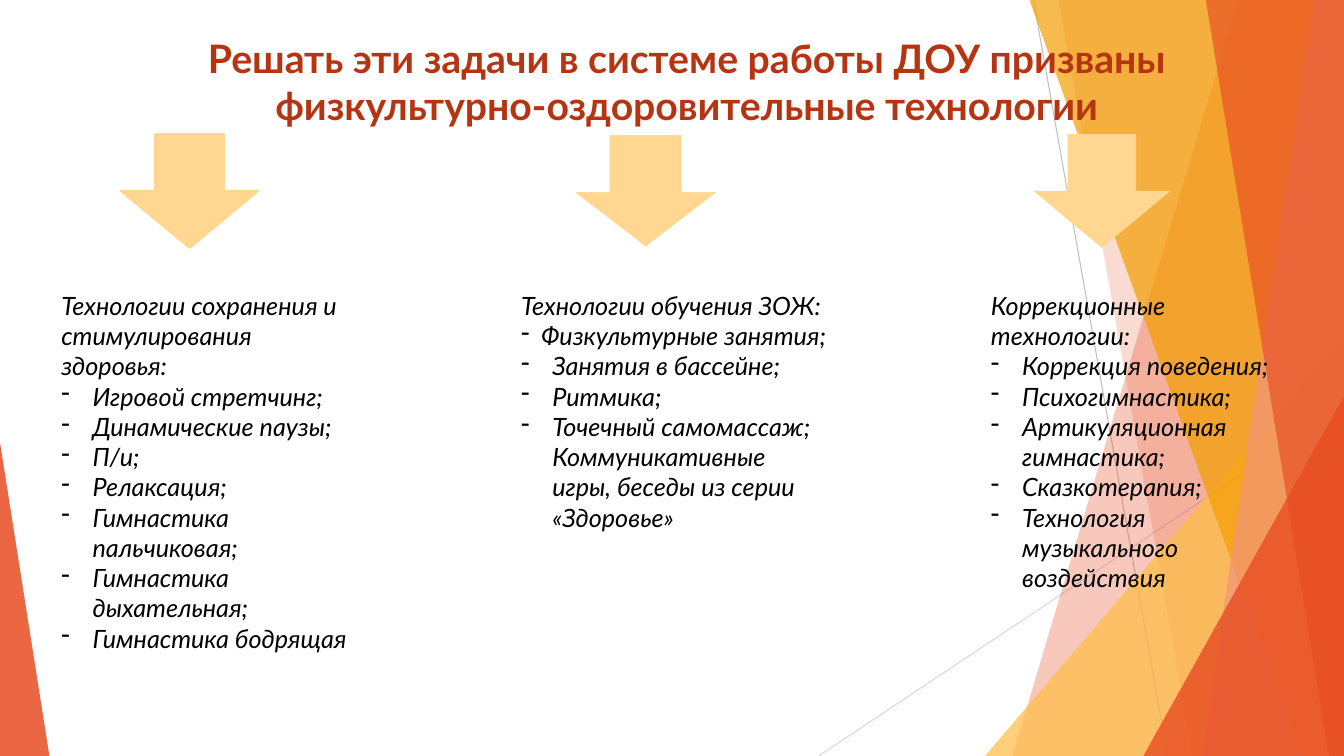
from lxml import etree
from pptx import Presentation
from pptx.dml.color import RGBColor
from pptx.enum.shapes import MSO_CONNECTOR as CONN, MSO_SHAPE as SHAPE
from pptx.enum.text import MSO_AUTO_SIZE as FIT, PP_ALIGN as ALIGN
from pptx.oxml.ns import qn
from pptx.util import Inches, Pt

WIDTH, HEIGHT = 13.33, 7.5
ORANGE_RED, AMBER, SALMON, YELLOW = "E84C22", "F49D00", "F1947A", "FFBD47"
SAND = "FFD791"
BULLET_INDENT = 0.31

COLUMNS = [
    ((0.51, 2.83, 3.14, 4.04), "Технологии сохранения и стимулирования здоровья:", [
        "Игровой стретчинг;", "Динамические паузы;", "П/и;", "Релаксация;",
        "Гимнастика пальчиковая;", "Гимнастика дыхательная;", "Гимнастика бодрящая"]),
    ((5.07, 2.83, 3.24, 3.74), "Технологии обучения ЗОЖ:", [
        ("Физкультурные занятия;", 0.2), "Занятия в бассейне;", "Ритмика;",
        "Точечный самомассаж;\nКоммуникативные игры, беседы из серии «Здоровье»"]),
    ((9.73, 2.83, 3.25, 3.43), "Коррекционные технологии:", [
        "Коррекция поведения;", "Психогимнастика;", "Артикуляционная гимнастика;",
        "Сказкотерапия;", "Технология музыкального воздействия"]),
]
ARROWS = [(1.2, 1.36, SAND), (5.67, 1.47, "FFFFFF"), (10.25, 1.36, None)]


def rgb(value):
    return RGBColor.from_string(value)


def paint(sp, fill, opacity=100, line=None):
    sp.shadow.inherit = False
    sp.fill.solid()
    sp.fill.fore_color.rgb = rgb(fill)
    if opacity < 100:
        color = sp.fill._xPr.find(qn("a:solidFill"))[0]
        etree.SubElement(color, qn("a:alpha")).set("val", str(opacity * 1000))
    if line:
        sp.line.color.rgb = rgb(line)
        sp.line.width = Pt(1.5)
    else:
        sp.line.fill.background()


def add_ray(slide, start, end, color):
    """Thin decorative line across the slide."""
    ray = slide.shapes.add_connector(CONN.STRAIGHT, *map(Inches, start + end))
    ray.line.color.rgb = rgb(color)
    ray.line.width = Pt(0.75)
    etree.SubElement(ray._element.spPr, qn("a:effectLst"))


def add_band(slide, top_x, bottom_x, color, opacity):
    """Full-height band from a slanted left edge to the slide's right edge."""
    builder = slide.shapes.build_freeform(Inches(top_x), 0, scale=1.0)
    corners = [(WIDTH, 0), (WIDTH, HEIGHT), (bottom_x, HEIGHT)]
    builder.add_line_segments([(Inches(x), Inches(y)) for x, y in corners])
    paint(builder.convert_to_shape(), color, opacity)


def add_corner(slide, left, top, width, apex, color, opacity):
    """Right triangle that stands on the slide's bottom edge."""
    box = map(Inches, (left, top, width, HEIGHT - top))
    sp = slide.shapes.add_shape(SHAPE.ISOSCELES_TRIANGLE, *box)
    sp.adjustments[0] = apex
    paint(sp, color, opacity)


def add_backdrop(slide):
    add_ray(slide, (10.25, 0), (11.58, HEIGHT), "BFBFBF")
    add_ray(slide, (WIDTH, 4.03), (8.12, HEIGHT), "D9D9D9")
    add_band(slide, 12.28, 10.04, ORANGE_RED, 30)
    add_band(slide, 10.5, 11.83, ORANGE_RED, 20)
    add_corner(slide, 9.77, 3.33, 3.56, 1, YELLOW, 72)
    add_band(slide, 10.21, 12.91, AMBER, 70)
    add_band(slide, 13.03, 11.92, SALMON, 70)
    add_band(slide, 11.96, 13.18, ORANGE_RED, 65)
    add_corner(slide, 11.34, 3.93, 1.99, 1, ORANGE_RED, 80)
    add_corner(slide, 0, 4.39, 0.49, 0, ORANGE_RED, 85)


def add_text_box(slide, box):
    tf = slide.shapes.add_textbox(*map(Inches, box)).text_frame
    tf.word_wrap = True
    tf.auto_size = FIT.SHAPE_TO_FIT_TEXT
    return tf


def write(p, text, size=18, color="000000", bold=False, italic=False,
          align=ALIGN.LEFT, bullet_indent=None):
    p.alignment = align
    for i, line in enumerate(text.split("\n")):
        if i:
            p.add_line_break()
        r = p.add_run()
        r.text = line
        r.font.name, r.font.size = "Lato", Pt(size)
        r.font.bold, r.font.italic = bold, italic
        r.font.color.rgb = rgb(color)
    if bullet_indent:
        pPr = p._p.get_or_add_pPr()
        pPr.set("marL", str(Inches(bullet_indent)))
        pPr.set("indent", str(-Inches(bullet_indent)))
        etree.SubElement(pPr, qn("a:buChar")).set("char", "-")


def add_title(slide, box):
    tf = add_text_box(slide, box)
    write(tf.paragraphs[0], "Решать эти задачи в системе работы ДОУ призваны "
          "физкультурно-оздоровительные технологии",
          size=28, color="B53513", bold=True, align=ALIGN.CENTER)


def add_arrow(slide, box, line):
    sp = slide.shapes.add_shape(SHAPE.DOWN_ARROW, *map(Inches, box))
    paint(sp, SAND, line=line)


def add_column(slide, box, heading, items):
    tf = add_text_box(slide, box)
    write(tf.paragraphs[0], heading, italic=True)
    for item in items:
        text, indent = (item, BULLET_INDENT) if isinstance(item, str) else item
        write(tf.add_paragraph(), text, italic=True, bullet_indent=indent)


def main():
    prs = Presentation()
    prs.slide_width, prs.slide_height = Inches(WIDTH), Inches(HEIGHT)
    slide = prs.slides.add_slide(prs.slide_layouts[6])
    add_backdrop(slide)
    add_title(slide, (1.2, 0.29, 11.22, 1.04))
    for left, width, line in ARROWS:
        add_arrow(slide, (left, 1.33, width, 1.13), line)
    for box, heading, items in COLUMNS:
        add_column(slide, box, heading, items)
    prs.save("out.pptx")


if __name__ == "__main__":
    main()
